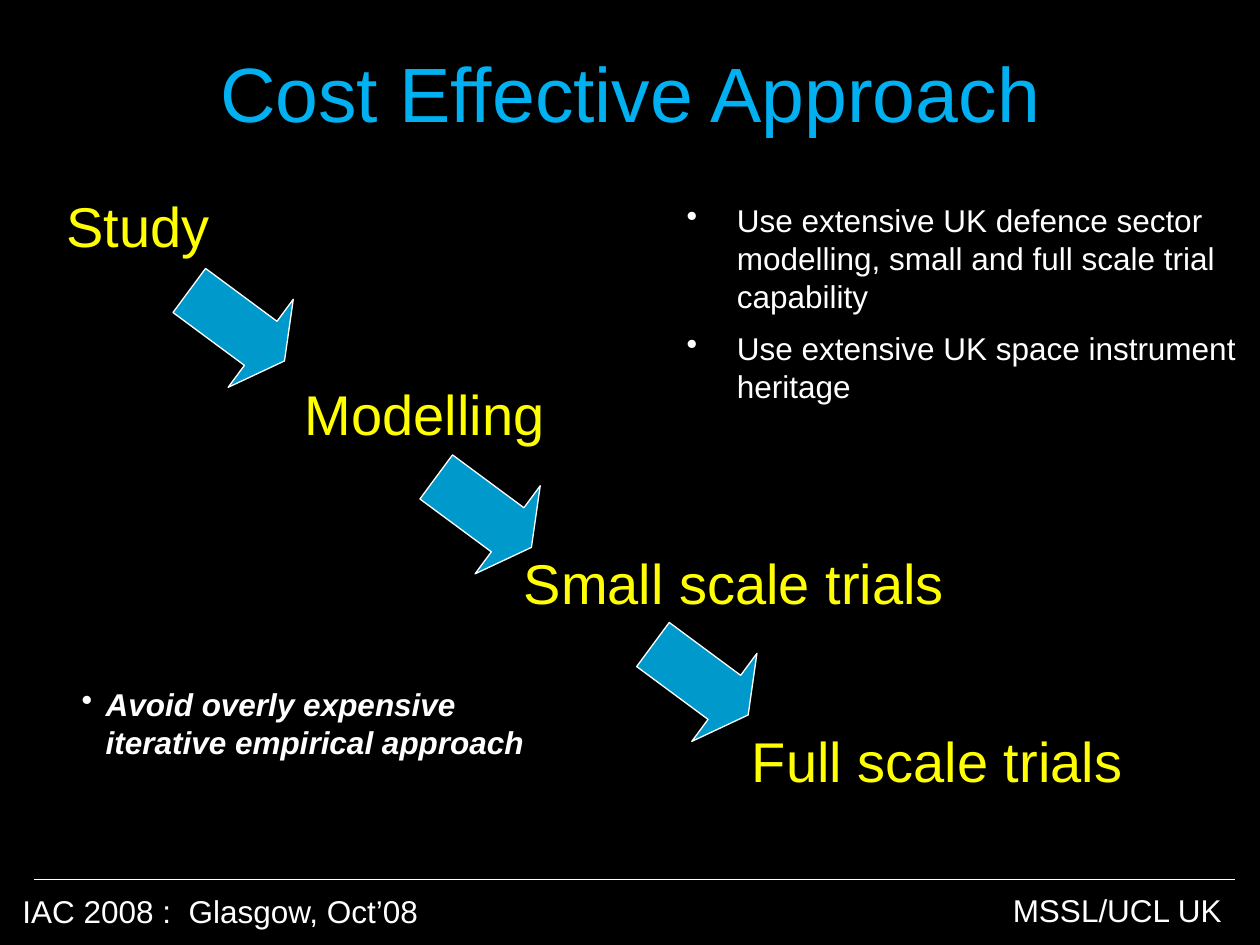
from dataclasses import dataclass

from lxml import etree
from pptx import Presentation
from pptx.dml.color import RGBColor
from pptx.enum.shapes import MSO_CONNECTOR, MSO_SHAPE
from pptx.enum.text import MSO_ANCHOR, PP_ALIGN
from pptx.oxml.ns import qn
from pptx.util import Inches, Pt

CENTER = PP_ALIGN.CENTER
MIDDLE = MSO_ANCHOR.MIDDLE
RIGHT_ARROW = MSO_SHAPE.RIGHT_ARROW
STRAIGHT = MSO_CONNECTOR.STRAIGHT
TITLE_ONLY = 5

# Grid of 100 columns by 75 rows; boxes are (column, row, columns, rows)
COLUMNS, ROWS = 100, 75
SLIDE_WIDTH, SLIDE_HEIGHT = Inches(10), Inches(7.5)


@dataclass(frozen=True)
class Theme:
    font: str = "Arial"
    background: RGBColor = RGBColor(0x00, 0x00, 0x00)
    title: RGBColor = RGBColor(0x00, 0xB0, 0xF0)
    step: RGBColor = RGBColor(0xFF, 0xFF, 0x00)
    arrow: RGBColor = RGBColor(0x00, 0x99, 0xCC)
    body: RGBColor = RGBColor(0xFF, 0xFF, 0xFF)
    title_size: int = 44
    step_size: int = 32
    body_size: int = 18
    line_width: float = 0.75


THEME = Theme()

# Label, label box, top left cell of the arrow that follows it
STEPS = [
    ("Study", (4.3, 14.7, 27.8, 8.1), (14.1, 21.5)),
    ("Modelling", (23.2, 29.6, 27.8, 8.7), (33.7, 36.3)),
    ("Small scale trials", (40.6, 43, 49.6, 7.9), (50.9, 49.6)),
    ("Full scale trials", (58.7, 57.2, 37.7, 7.9), None),
]
ARROW_SIZE = (9.4, 8.7)
ARROW_ANGLE = 36.5

ADVANTAGES = [
    "Use extensive UK defence sector modelling, small and full scale trial capability",
    "Use extensive UK space instrument heritage",
]
CAUTION = ["Avoid overly expensive iterative empirical approach"]


def place(box):
    """Turn a grid box into slide lengths."""
    column, row, columns, rows = box
    across, down = SLIDE_WIDTH / COLUMNS, SLIDE_HEIGHT / ROWS
    return [round(n) for n in (column * across, row * down, columns * across, rows * down)]


def style(para, size, color, bold=False, italic=False):
    for span in para.runs:
        font = span.font
        font.name, font.size = THEME.font, Pt(size)
        font.bold, font.italic = bold, italic
        font.color.rgb = color


def add_text(page, box, lines, size, color, wrap=True, **emphasis):
    frame = page.shapes.add_textbox(*place(box)).text_frame
    frame.word_wrap = wrap
    frame.text = "\n".join(lines)
    for para in frame.paragraphs:
        style(para, size, color, **emphasis)
    return frame


def add_title(page, box, text):
    title = page.shapes.title
    title.left, title.top, title.width, title.height = place(box)
    frame = title.text_frame
    frame.text = text
    frame.vertical_anchor = MIDDLE
    frame.paragraphs[0].alignment = CENTER
    style(frame.paragraphs[0], THEME.title_size, THEME.title)


def add_bullets(page, box, lines, indent, gap=0, **emphasis):
    frame = add_text(page, box, lines, THEME.body_size, THEME.body, **emphasis)
    for index, para in enumerate(frame.paragraphs):
        if index:
            para.space_before = Pt(gap)
        properties = para._p.get_or_add_pPr()
        properties.set("marL", str(Inches(indent)))
        properties.set("indent", str(-Inches(indent)))
        etree.SubElement(properties, qn("a:buChar")).set("char", "•")


def add_arrow(page, box):
    arrow = page.shapes.add_shape(RIGHT_ARROW, *place(box))
    arrow.adjustments[0], arrow.adjustments[1] = 0.5, 0.27
    arrow.rotation = ARROW_ANGLE
    arrow.shadow.inherit = False
    arrow.fill.solid()
    arrow.fill.fore_color.rgb = THEME.arrow
    arrow.line.color.rgb = THEME.body
    arrow.line.width = Pt(THEME.line_width)


def add_steps(page):
    for label, box, _ in STEPS:
        add_text(page, box, [label], THEME.step_size, THEME.step)
    for _, _, corner in STEPS:
        if corner:
            add_arrow(page, corner + ARROW_SIZE)


def add_footer(page, box):
    left, top, width, _ = place(box)
    rule = page.shapes.add_connector(STRAIGHT, left, top, left + width, top)
    rule.line.color.rgb = THEME.body
    rule.line.width = Pt(THEME.line_width)
    etree.SubElement(rule._element.spPr, qn("a:effectLst"))

    column, row, columns, _ = box
    notes = [
        ("IAC 2008 :  Glasgow, Oct’08", (column - 1.9, row + 0.5, 34.4, 4)),
        ("MSSL/UCL UK", (column + columns - 18.6, row + 0.4, 18.7, 4)),
    ]
    for text, note_box in notes:
        add_text(page, note_box, [text], THEME.body_size, THEME.body, wrap=False)


def main():
    deck = Presentation()
    deck.slide_width, deck.slide_height = SLIDE_WIDTH, SLIDE_HEIGHT
    page = deck.slides.add_slide(deck.slide_layouts[TITLE_ONLY])
    page.background.fill.solid()
    page.background.fill.fore_color.rgb = THEME.background

    add_footer(page, (2.7, 69.8, 95.3, 4.5))
    add_title(page, (3.5, 0, 93.1, 14.5), "Cost Effective Approach")
    add_steps(page)
    add_bullets(page, (5.5, 53.9, 40.6, 7.1), CAUTION, 0.19, bold=True, italic=True)
    add_bullets(page, (53.5, 15.5, 46.5, 17.4), ADVANTAGES, 0.4, gap=8)
    deck.save("out.pptx")


if __name__ == "__main__":
    main()
